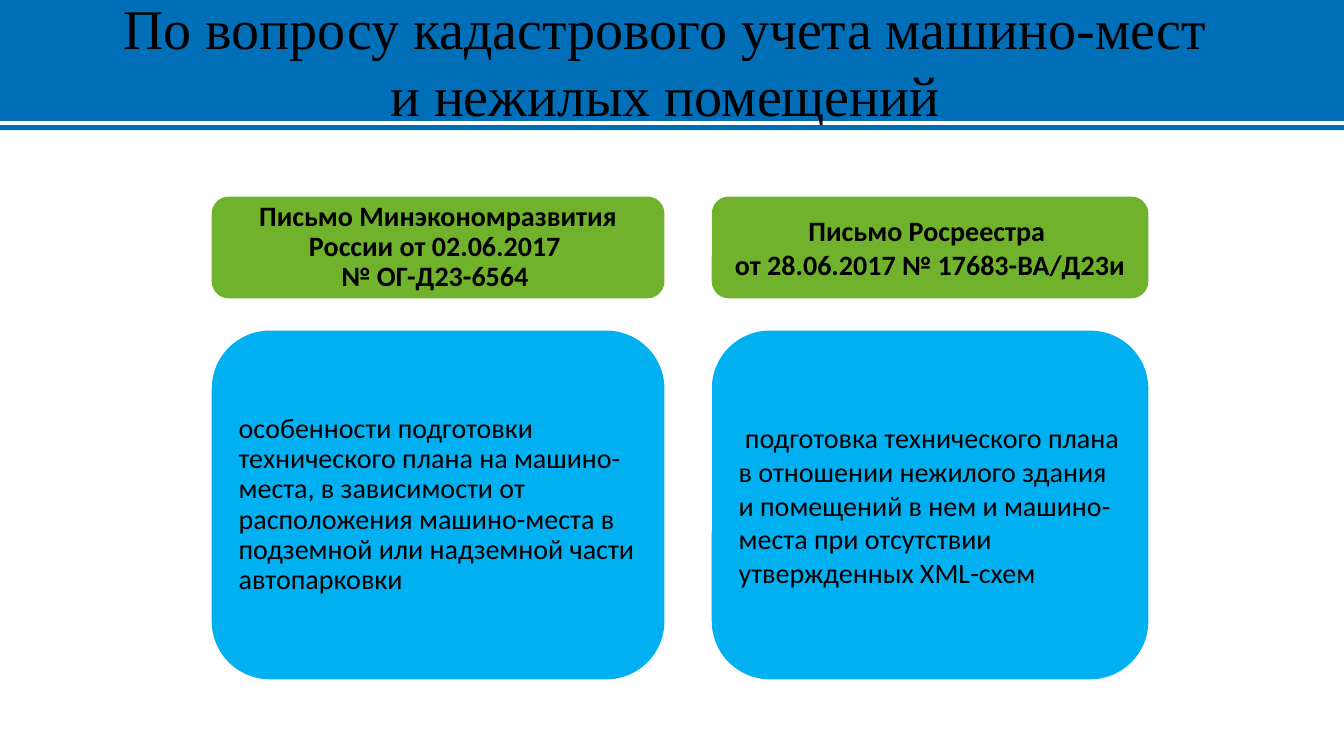
from typing import NamedTuple

from pptx import Presentation
from pptx.dml.color import RGBColor
from pptx.enum.shapes import MSO_SHAPE
from pptx.enum.text import MSO_ANCHOR, MSO_AUTO_SIZE, PP_ALIGN
from pptx.util import Inches, Pt

ROUND, RECT = MSO_SHAPE.ROUNDED_RECTANGLE, MSO_SHAPE.RECTANGLE
LEFT, CENTER = PP_ALIGN.LEFT, PP_ALIGN.CENTER
MIDDLE = MSO_ANCHOR.MIDDLE
NONE = MSO_AUTO_SIZE.NONE
BLUE, SKY, GREEN, BLACK = "006FB8", "00B0F0", "70B22C", "000000"
WIDTH, HEIGHT = 13.33, 7.5
HEAD_TOP, HEAD_HIGH = 1.95, 1.01
BODY_TOP, BODY_HIGH = 3.28, 3.46


class Column(NamedTuple):
    """One letter: its place, line spacing, heading and content."""
    left: float
    width: float
    pitch: float
    head: list[str]
    body: str


COLUMNS = [
    Column(2.1, 4.49, 0.9,
           ["Письмо Минэкономразвития России от 02.06.2017 ", "№ ОГ-Д23-6564 "],
           "особенности подготовки технического плана на машино-места, "
           "в зависимости от расположения машино-места в подземной "
           "или надземной части автопарковки"),
    Column(7.06, 4.33, 1.0,
           ["Письмо Росреестра ", "от 28.06.2017 № 17683-ВА/Д23и"],
           " подготовка технического плана в отношении нежилого здания "
           "и помещений в нем и машино-места при отсутствии "
           "утвержденных XML-схем"),
]


def paint(shape, color: str) -> None:
    """Fill a shape with a hex colour and hide its outline."""
    shape.fill.solid()
    shape.fill.fore_color.rgb = RGBColor.from_string(color)
    shape.line.fill.background()


def write(shape, lines: list[str], *, size: float = 20, font: str = "Calibri",
          bold: bool = False, align: PP_ALIGN = LEFT, pitch: float = 1.0,
          wrap: bool = True) -> None:
    """Put lines of text into a shape, one paragraph each."""
    frame = shape.text_frame
    frame.auto_size = NONE
    frame.word_wrap = wrap
    frame.vertical_anchor = MIDDLE
    frame.text = "\n".join(lines)
    for para in frame.paragraphs:
        para.alignment = align
        para.line_spacing = pitch
        for run in para.runs:
            run.font.size = Pt(size)
            run.font.name = font
            run.font.bold = bold
            run.font.color.rgb = RGBColor.from_string(BLACK)


def add_box(slide, kind: MSO_SHAPE, left: float, top: float, width: float,
            height: float, color: str):
    """Draw a plain filled shape."""
    box = slide.shapes.add_shape(kind, Inches(left), Inches(top),
                                 Inches(width), Inches(height))
    box.shadow.inherit = False
    paint(box, color)
    return box


def add_title(slide) -> None:
    """Turn the title placeholder into the top band with a rule below."""
    title = slide.shapes.title
    title.left, title.top = Inches(0), Inches(0)
    title.width, title.height = Inches(WIDTH), Inches(1.2)
    paint(title, BLUE)
    write(title, ["По вопросу кадастрового учета машино-мест ",
                  "и нежилых помещений "],
          size=40, font="Times New Roman", align=CENTER, wrap=False)
    add_box(slide, RECT, 0, 1.24, WIDTH, 0.05, BLUE)


def add_column(slide, col: Column) -> None:
    """Draw the heading and content boxes of one letter."""
    body = add_box(slide, ROUND, col.left, BODY_TOP, col.width, BODY_HIGH, SKY)
    write(body, [col.body], pitch=col.pitch)
    head = add_box(slide, ROUND, col.left, HEAD_TOP, col.width, HEAD_HIGH, GREEN)
    write(head, col.head, bold=True, align=CENTER, pitch=col.pitch)


def main() -> None:
    """Build and save the slide."""
    deck = Presentation()
    deck.slide_width, deck.slide_height = Inches(WIDTH), Inches(HEIGHT)
    slide = deck.slides.add_slide(deck.slide_layouts[5])
    add_title(slide)
    for col in COLUMNS:
        add_column(slide, col)
    deck.save("out.pptx")


if __name__ == "__main__":
    main()
